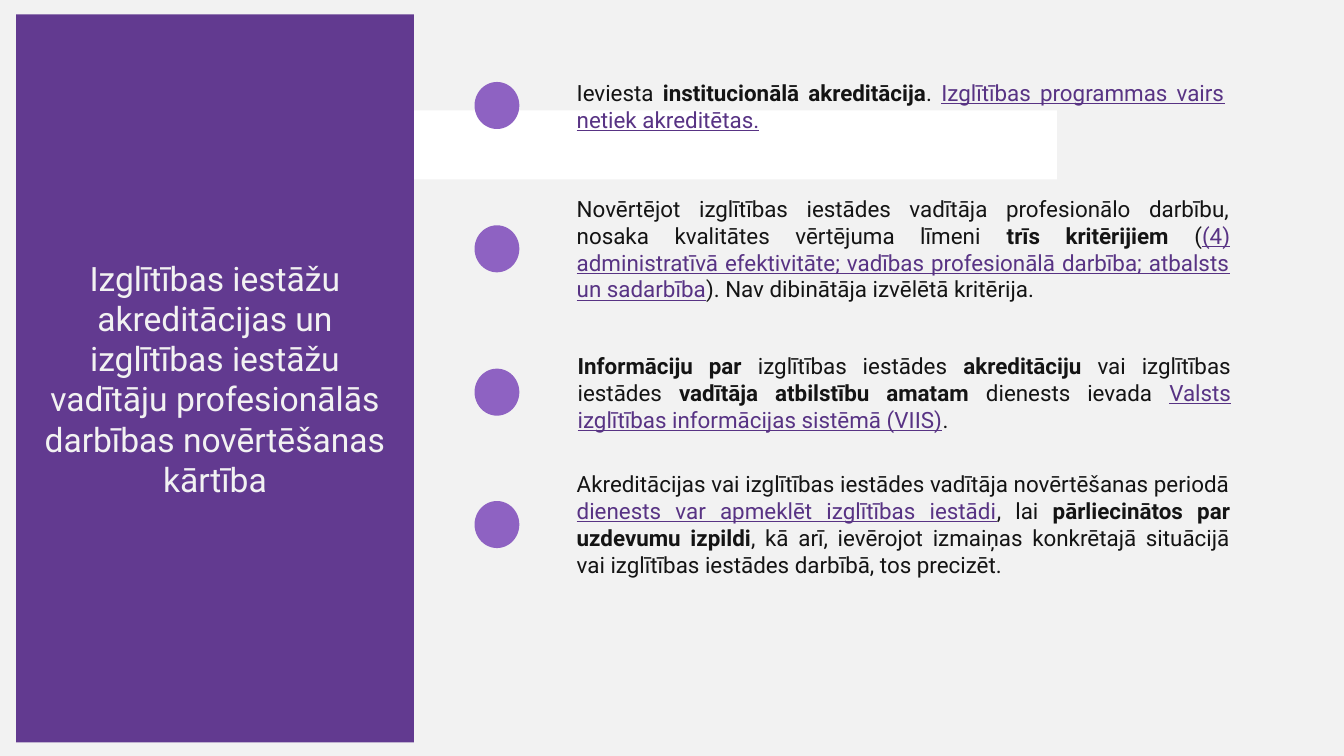
from dataclasses import dataclass

import pptx
import pptx.dml.color
import pptx.enum.shapes
import pptx.enum.text
import pptx.util

Pt = pptx.util.Pt
Color = pptx.dml.color.RGBColor.from_string
Shape = pptx.enum.shapes.MSO_SHAPE
Align = pptx.enum.text.PP_ALIGN


@dataclass(frozen=True)
class Theme:
    font: str = "Roboto"
    title_size: float = 18
    body_size: float = 12
    background: str = "F2F2F2"
    band: str = "FFFFFF"
    panel: str = "623A90"
    marker: str = "8E62C2"
    ink: str = "141414"
    accent: str = "583384"


theme = Theme()
deck = pptx.Presentation()
deck.slide_width, deck.slide_height = Pt(720), Pt(405)
page = deck.slides.add_slide(deck.slide_layouts[6])
page.background.fill.solid()
page.background.fill.fore_color.rgb = Color(theme.background)


def add_block(kind, left, top, width, height, color):
    block = page.shapes.add_shape(kind, Pt(left), Pt(top), Pt(width), Pt(height))
    block.shadow.inherit = False
    block.fill.solid()
    block.fill.fore_color.rgb = Color(color)
    block.line.fill.background()
    return block


def write(box, spans, size, color, align, inset_x, inset_y, space_after=0):
    """Fill a box with one paragraph of (text, style) spans; style is "", "bold" or "accent"."""
    frame = box.text_frame
    frame.word_wrap = True
    frame.vertical_anchor = pptx.enum.text.MSO_ANCHOR.MIDDLE
    frame.margin_left = frame.margin_right = Pt(inset_x)
    frame.margin_top = frame.margin_bottom = Pt(inset_y)
    para = frame.paragraphs[0]
    para.alignment = align
    para.space_after = Pt(space_after)
    for text, style in spans:
        span = para.add_run()
        span.text = text
        span.font.name = theme.font
        span.font.size = Pt(size)
        span.font.bold = style == "bold"
        span.font.underline = style == "accent"
        span.font.color.rgb = Color(theme.accent if style == "accent" else color)


add_block(Shape.RECTANGLE, 153.36, 59.2, 412.9, 36.9, theme.band)
panel = add_block(Shape.RECTANGLE, 8.64, 7.75, 213.1, 390, theme.panel)
title = ("Izglītības iestāžu akreditācijas un izglītības iestāžu vadītāju "
         "profesionālās darbības novērtēšanas kārtība")
write(panel, [(title, "")], size=theme.title_size, color=theme.background,
      align=Align.CENTER, inset_x=6.5, inset_y=3)

# Each point: marker top, text left, top, width, height, spans
points = [
    (43.9, 304, 30.2, 357, 53.3, [
        ("Ieviesta ", ""),
        ("institucionālā akreditācija", "bold"),
        (". ", ""),
        ("Izglītības programmas vairs netiek akreditētas.", "accent"),
    ]),
    (120.7, 304, 106.6, 360, 53.3, [
        ("Novērtējot izglītības iestādes vadītāja profesionālo darbību, "
         "nosaka kvalitātes vērtējuma līmeni ", ""),
        ("trīs kritērijiem", "bold"),
        (" (", ""),
        ("(4) administratīvā efektivitāte; vadības profesionālā darbība; "
         "atbalsts un sadarbība", "accent"),
        ("). Nav dibinātāja izvēlētā kritērija.", ""),
    ]),
    (197.5, 304.5, 179.3, 360, 61.9, [
        ("Informāciju par ", "bold"),
        ("izglītības iestādes ", ""),
        ("akreditāciju", "bold"),
        (" vai izglītības iestādes ", ""),
        ("vadītāja atbilstību amatam ", "bold"),
        ("dienests ievada ", ""),
        ("Valsts izglītības informācijas sistēmā (VIIS)", "accent"),
        (".", ""),
    ]),
    (268.4, 304, 249.8, 360, 61.9, [
        ("Akreditācijas vai izglītības iestādes vadītāja novērtēšanas periodā ", ""),
        ("dienests var apmeklēt izglītības iestādi", "accent"),
        (", lai ", ""),
        ("pārliecinātos par uzdevumu izpildi", "bold"),
        (", kā arī, ievērojot izmaiņas konkrētajā situācijā vai izglītības "
         "iestādes darbībā, tos precizēt.", ""),
    ]),
]
for marker_top, left, top, width, height, spans in points:
    add_block(Shape.OVAL, 254.2, marker_top, 24, 25.2, theme.marker)
    box = page.shapes.add_textbox(Pt(left), Pt(top), Pt(width), Pt(height))
    write(box, spans, size=theme.body_size, color=theme.ink,
          align=Align.JUSTIFY, inset_x=5, inset_y=2.5, space_after=5.5)

deck.save("out.pptx")
